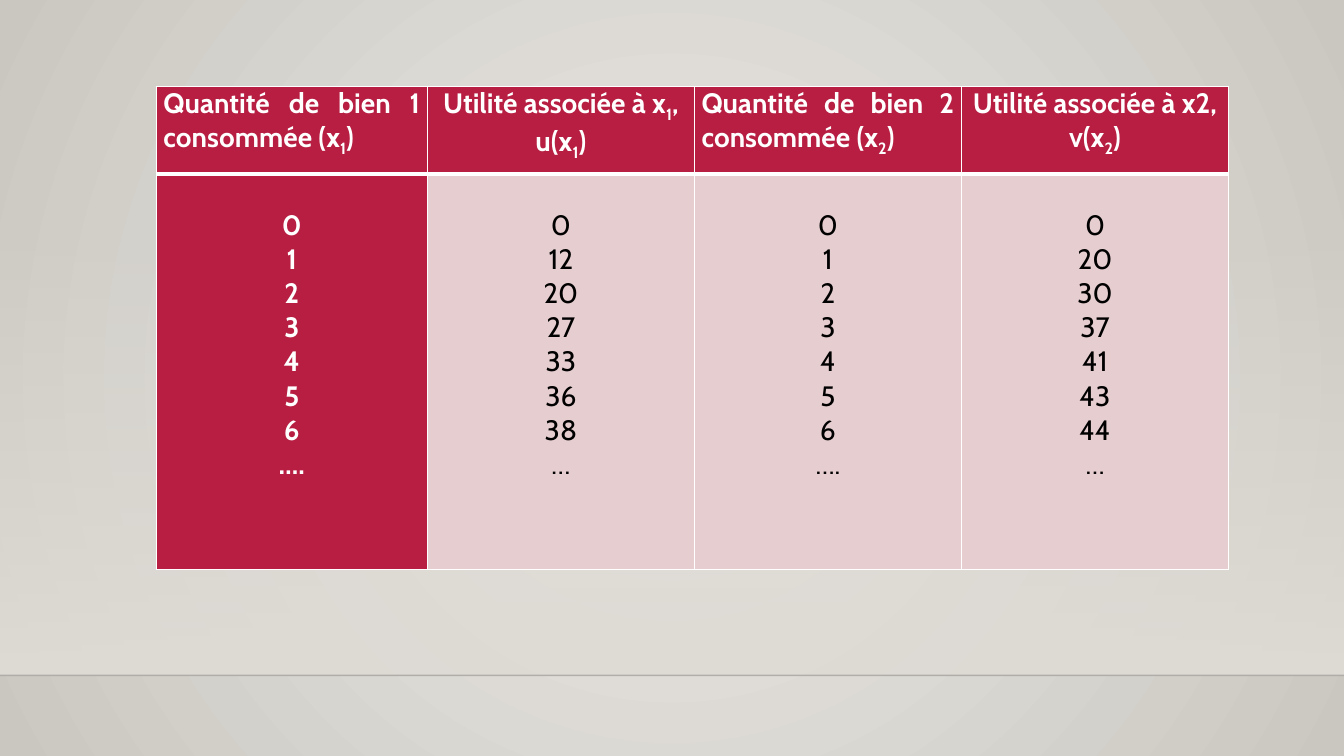
"""Build a slide with a table of the utilities of two goods."""
from lxml.etree import SubElement
from pptx import Presentation
from pptx.dml.color import RGBColor as RGB
from pptx.enum.shapes import MSO_CONNECTOR as CONNECTOR, MSO_SHAPE as SHAPE
from pptx.enum.text import PP_ALIGN as ALIGN
from pptx.oxml.ns import qn
from pptx.util import Cm, Pt

THEME = {
    "font": "Cabin", "size": Pt(20),
    "crimson": "B71E42", "pink": "E6CDCF", "white": "FFFFFF", "black": "000000",
    "centre": "ECEAE7", "edge": "CAC7C1", "floor": "DFDBD5",
    "thin": Pt(1), "thick": Pt(3),
}
WIDTH, HEIGHT, FLOOR_TOP, FLOOR_LINE = Cm(33.87), Cm(19.05), Cm(5.61), Cm(17.02)


def set_gradient(root, stops):
    """Refill the first gradient under root with (position, colour, alpha) stops."""
    gradient = next(root.iter(qn("a:gradFill")))
    gradient.clear()
    stop_list = SubElement(gradient, qn("a:gsLst"))
    for position, colour, alpha in stops:
        stop = SubElement(stop_list, qn("a:gs"), pos=str(position * 1000))
        value = SubElement(stop, qn("a:srgbClr"), val=colour)
        SubElement(value, qn("a:alpha"), val=str(alpha * 1000))
    return gradient


def set_borders(cell, widths):
    """Draw white cell borders with the given width for each side."""
    for side, width in widths.items():
        border = SubElement(cell._tc.get_or_add_tcPr(), qn(f"a:ln{side}"), w=str(width))
        fill = SubElement(border, qn("a:solidFill"))
        SubElement(fill, qn("a:srgbClr"), val=THEME["white"])


presentation = Presentation()
presentation.slide_width, presentation.slide_height = WIDTH, HEIGHT
slide = presentation.slides.add_slide(presentation.slide_layouts[6])

slide.background.fill.gradient()
glow = set_gradient(slide._element, [(0, THEME["centre"], 100), (100, THEME["edge"], 100)])
glow_path = SubElement(glow, qn("a:path"), path="circle")
SubElement(glow_path, qn("a:fillToRect"), l="50000", t="50000", r="50000", b="50000")

wall = slide.shapes.add_shape(SHAPE.RECTANGLE, 0, FLOOR_TOP, WIDTH, FLOOR_LINE - FLOOR_TOP)
wall.shadow.inherit = False
wall.line.fill.background()
wall.fill.gradient()
fade = set_gradient(wall._element, [(0, THEME["floor"], 0), (100, THEME["floor"], 100)])
SubElement(fade, qn("a:lin"), ang="5400000", scaled="0")

floor_line = slide.shapes.add_connector(CONNECTOR.STRAIGHT, 0, FLOOR_LINE, WIDTH, FLOOR_LINE)
floor_line.line.width = THEME["thin"]
floor_line.line.color.rgb = RGB.from_string(THEME["black"])
line_colour = next(floor_line._element.iter(qn("a:srgbClr")))
SubElement(line_colour, qn("a:alpha"), val="20000")
SubElement(floor_line._element.spPr, qn("a:effectLst"))

columns = [
    ("Quantité de bien 1 consommée (x_1)", ALIGN.JUSTIFY, "0 1 2 3 4 5 6 …."),
    ("Utilité associée à x_1, u(x_1)", ALIGN.CENTER, "0 12 20 27 33 36 38 …"),
    ("Quantité de bien 2 consommée (x_2)", ALIGN.JUSTIFY, "0 1 2 3 4 5 6 …."),
    ("Utilité associée à x2, v(x_2)", ALIGN.CENTER, "0 20 30 37 41 43 44 …"),
]
column_widths = [Cm(6.83)] + [Cm(6.73)] * 3
row_heights = [Cm(2.21), Cm(9.96)]
table = slide.shapes.add_table(2, 4, Cm(3.94), Cm(2.18), sum(column_widths), sum(row_heights)).table
for row, height in zip(table.rows, row_heights):
    row.height = height

for index, (heading, heading_align, values) in enumerate(columns):
    table.columns[index].width = column_widths[index]
    for row_index, lines in enumerate([[heading], values.split()]):
        cell = table.cell(row_index, index)
        is_header = row_index == 0
        is_strong = is_header or index == 0
        widths = dict.fromkeys("LRTB", THEME["thin"])
        widths["B" if is_header else "T"] = THEME["thick"]
        set_borders(cell, widths)
        cell.fill.solid()
        cell.fill.fore_color.rgb = RGB.from_string(THEME["crimson" if is_strong else "pink"])
        margins = {"margin_left": Cm(0.18), "margin_right": Cm(0.18),
                   "margin_top": 0 if is_header else Cm(0.86), "margin_bottom": 0}
        for name, value in margins.items():
            setattr(cell, name, value)

        font_format = {"name": THEME["font"], "size": THEME["size"], "bold": is_strong}
        for line_index, line in enumerate(lines):
            frame = cell.text_frame
            paragraph = frame.add_paragraph() if line_index else frame.paragraphs[0]
            paragraph.alignment = heading_align if is_header else ALIGN.CENTER
            first, *others = line.split("_")
            pieces = [(first, False)]
            for part in others:
                pieces += [(part[0], True), (part[1:], False)]
            for text, is_subscript in pieces:
                run = paragraph.add_run()
                run.text = text
                for name, value in font_format.items():
                    setattr(run.font, name, value)
                run.font.color.rgb = RGB.from_string(THEME["white" if is_strong else "black"])
                if is_subscript:
                    run._r.get_or_add_rPr().set("baseline", "-25000")

presentation.save("out.pptx")
